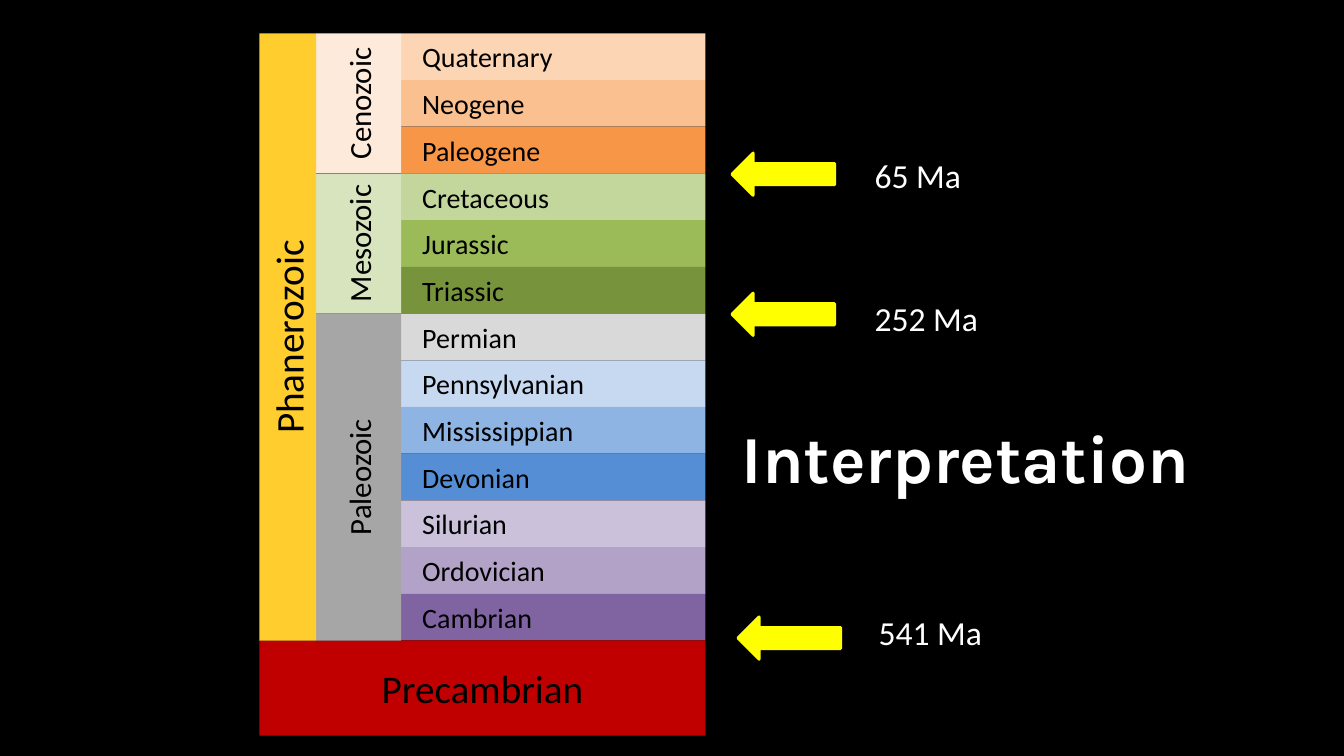
"""Build a geologic time scale slide with dated boundaries."""
from pptx import Presentation
from pptx.dml.color import RGBColor
from pptx.enum import shapes, text
from pptx.util import Cm, Pt

BLACK = RGBColor(0, 0, 0)
WHITE = RGBColor(255, 255, 255)
YELLOW = RGBColor(255, 255, 0)
GOLD = RGBColor(0xFF, 0xCD, 0x2D)
RED = RGBColor(0xC0, 0, 0)

PERIODS = [
    ("Quaternary", RGBColor(0xFC, 0xD5, 0xB5)),
    ("Neogene", RGBColor(0xFA, 0xC0, 0x90)),
    ("Paleogene", RGBColor(0xF7, 0x96, 0x46)),
    ("Cretaceous", RGBColor(0xC3, 0xD6, 0x9B)),
    ("Jurassic", RGBColor(0x9B, 0xBB, 0x59)),
    ("Triassic", RGBColor(0x77, 0x93, 0x3C)),
    ("Permian", RGBColor(0xD9, 0xD9, 0xD9)),
    ("Pennsylvanian", RGBColor(0xC6, 0xD9, 0xF1)),
    ("Mississippian", RGBColor(0x8E, 0xB4, 0xE3)),
    ("Devonian", RGBColor(0x55, 0x8E, 0xD5)),
    ("Silurian", RGBColor(0xCC, 0xC1, 0xDA)),
    ("Ordovician", RGBColor(0xB3, 0xA2, 0xC7)),
    ("Cambrian", RGBColor(0x80, 0x64, 0xA2)),
]
ERAS = [
    ("Cenozoic", 3, RGBColor(0xFD, 0xEA, 0xDA)),
    ("Mesozoic", 3, RGBColor(0xD7, 0xE4, 0xBD)),
    ("Paleozoic", 7, RGBColor(0xA6, 0xA6, 0xA6)),
]
BOUNDARIES = [
    ("65 Ma", 19.74, 4.39, 21.79, 3.78, 2.97),
    ("252 Ma", 19.74, 7.92, 21.79, 7.39, 3.81),
    ("541 Ma", 19.89, 16.08, 21.89, 15.29, 5.51),
]
TOP = 0.84
COLUMN_HEIGHT = 15.3
ROW = COLUMN_HEIGHT / len(PERIODS)
EON_LEFT, ERA_LEFT, PERIOD_LEFT, RIGHT = 6.54, 7.97, 10.11, 17.78


def add_words(tf, words, size, color, font="Calibri", bold=None):
    """Write one styled run into the first paragraph and return the paragraph."""
    p = tf.paragraphs[0]
    r = p.add_run()
    r.text = words
    r.font.name, r.font.size, r.font.bold = font, Pt(size), bold
    r.font.color.rgb = color
    return p


def add_solid(slide, kind, left, top, width, height, color):
    """Add a flat filled shape without outline or shadow."""
    sp = slide.shapes.add_shape(kind, Cm(left), Cm(top), Cm(width), Cm(height))
    sp.shadow.inherit = False
    sp.fill.solid()
    sp.fill.fore_color.rgb = color
    sp.line.fill.background()
    return sp


def add_block(slide, words, left, top, width, height, color, size):
    """Add a rectangle with centred black text."""
    sp = add_solid(slide, shapes.MSO_SHAPE.RECTANGLE, left, top, width, height, color)
    tf = sp.text_frame
    tf.word_wrap = True
    tf.vertical_anchor = text.MSO_ANCHOR.MIDDLE
    add_words(tf, words, size, BLACK).alignment = text.PP_ALIGN.CENTER
    return sp


def add_period(slide, index, name, color):
    """Add one period row with left-aligned text."""
    sp = add_block(slide, name, PERIOD_LEFT, TOP + index * ROW,
                   RIGHT - PERIOD_LEFT, ROW, color, 20)
    sp.text_frame.margin_left = Cm(0.53)
    sp.text_frame.paragraphs[0].alignment = text.PP_ALIGN.LEFT


def add_upright_block(slide, words, left, top, width, height, color, size):
    """Add a tall block whose text reads upwards."""
    sp = add_block(slide, words, left + (width - height) / 2,
                   top + (height - width) / 2, height, width, color, size)
    sp.rotation = 270


def add_arrow(slide, center_x, center_y, length=2.59, breadth=1.07):
    """Add a yellow arrow pointing left around a centre."""
    sp = add_solid(slide, shapes.MSO_SHAPE.DOWN_ARROW, center_x - breadth / 2,
                   center_y - length / 2, breadth, length, YELLOW)
    sp.rotation = 90
    sp.line.color.rgb = YELLOW
    sp.line.width = Pt(2)


def add_label(slide, words, left, top, width, height, size, font="Calibri", bold=None):
    """Add a white text label."""
    tf = slide.shapes.add_textbox(Cm(left), Cm(top), Cm(width), Cm(height)).text_frame
    tf.word_wrap = True
    tf.auto_size = text.MSO_AUTO_SIZE.SHAPE_TO_FIT_TEXT
    add_words(tf, words, size, WHITE, font, bold)


def main():
    """Assemble and save the slide."""
    prs = Presentation()
    prs.slide_width, prs.slide_height = Cm(33.87), Cm(19.05)
    s = prs.slides.add_slide(prs.slide_layouts[6])
    s.background.fill.solid()
    s.background.fill.fore_color.rgb = BLACK

    for index, (name, color) in enumerate(PERIODS):
        add_period(s, index, name, color)
    add_block(s, "Precambrian", EON_LEFT, TOP + COLUMN_HEIGHT,
              RIGHT - EON_LEFT, 2.4, RED, 28)

    top = TOP
    for name, rows, color in ERAS:
        add_upright_block(s, name, ERA_LEFT, top, PERIOD_LEFT - ERA_LEFT,
                          rows * ROW, color, 22)
        top += rows * ROW
    add_upright_block(s, "Phanerozoic", EON_LEFT, TOP, ERA_LEFT - EON_LEFT,
                      COLUMN_HEIGHT, GOLD, 28)

    for age, arrow_x, arrow_y, left, label_top, width in BOUNDARIES:
        add_arrow(s, arrow_x, arrow_y)
        add_label(s, age, left, label_top, width, 1.27, 24)
    add_label(s, "Interpretation", 18.44, 10.36, 12.73, 2.31, 48, "Karla", True)

    prs.save("out.pptx")


if __name__ == "__main__":
    main()
